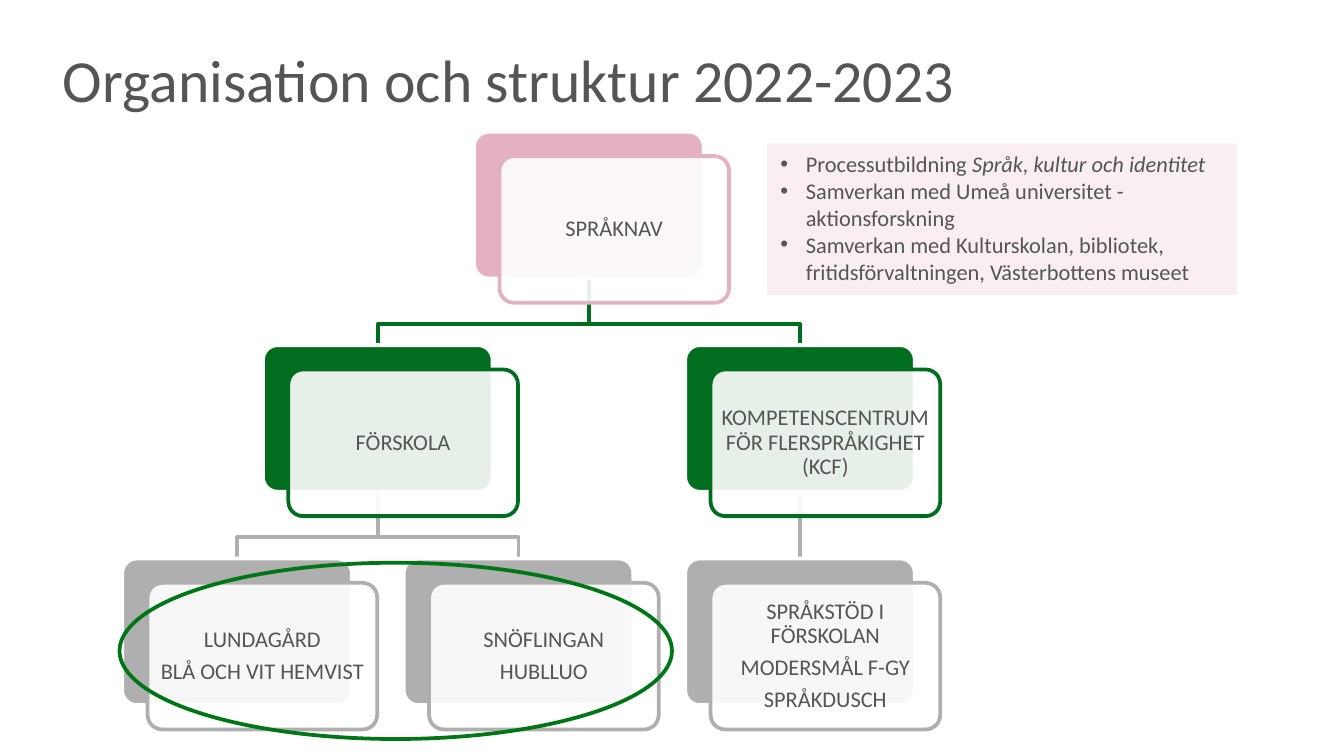
from dataclasses import dataclass
from typing import Optional

import pptx
import pptx.dml.color
import pptx.enum.shapes
import pptx.enum.text
import pptx.oxml.ns
import pptx.util
from lxml import etree
from pptx.dml.color import RGBColor
from pptx.enum.shapes import MSO_CONNECTOR, MSO_SHAPE
from pptx.enum.text import MSO_ANCHOR, MSO_AUTO_SIZE, PP_ALIGN
from pptx.oxml.ns import qn
from pptx.util import Cm, Pt

TEXT = RGBColor(0x55, 0x55, 0x55)
WHITE = RGBColor(0xFF, 0xFF, 0xFF)
PINK = RGBColor(0xE3, 0xB1, 0xC2)
PALE_PINK = RGBColor(0xF9, 0xEF, 0xF3)
GREEN = RGBColor(0x00, 0x6E, 0x1E)
RING_GREEN = RGBColor(0x00, 0x76, 0x16)
GREY = RGBColor(0xAF, 0xAF, 0xAF)
LEVEL_COLORS = [PINK, GREEN, GREY]

FONT = "Calibri"
LINE_WIDTH = Pt(2)
CARD_WIDTH, CARD_HEIGHT = 4.34, 2.77
FIRST_LEFT, COLUMN_STEP = 2.31, 5.32
FIRST_TOP, LEVEL_STEP = 2.49, 4.03
FRONT_SHIFT_X, FRONT_SHIFT_Y = 0.48, 0.46
BEND_DROP = 0.86


@dataclass(frozen=True)
class Unit:
    lines: tuple[str, ...]
    level: int
    column: float
    parent: Optional["Unit"] = None

    @property
    def left(self) -> float:
        return FIRST_LEFT + self.column * COLUMN_STEP

    @property
    def top(self) -> float:
        return FIRST_TOP + self.level * LEVEL_STEP

    @property
    def center(self) -> float:
        return self.left + CARD_WIDTH / 2

    @property
    def bottom(self) -> float:
        return self.top + CARD_HEIGHT

    @property
    def color(self) -> RGBColor:
        return LEVEL_COLORS[self.level]


ROOT = Unit(("SPRÅKNAV",), 0, 1.25)
PRESCHOOL = Unit(("FÖRSKOLA",), 1, 0.5, ROOT)
CENTRE = Unit(("KOMPETENSCENTRUM FÖR FLERSPRÅKIGHET (KCF)",), 1, 2, ROOT)
UNITS = [
    ROOT,
    PRESCHOOL,
    Unit(("LUNDAGÅRD", "BLÅ OCH VIT HEMVIST"), 2, 0, PRESCHOOL),
    Unit(("SNÖFLINGAN", "HUBLLUO"), 2, 1, PRESCHOOL),
    CENTRE,
    Unit(("SPRÅKSTÖD I FÖRSKOLAN", "MODERSMÅL F-GY", "SPRÅKDUSCH"), 2, 2, CENTRE),
]
NOTES = [
    ("Processutbildning ", "Språk, kultur och identitet"),
    ("Samverkan med Umeå universitet - aktionsforskning", ""),
    ("Samverkan med Kulturskolan, bibliotek, fritidsförvaltningen, Västerbottens museet", ""),
]


def set_font(paragraph, size: float) -> None:
    paragraph.font.name = FONT
    paragraph.font.size = Pt(size)
    paragraph.font.color.rgb = TEXT


def set_line(shape, color: RGBColor) -> None:
    shape.line.color.rgb = color
    shape.line.width = LINE_WIDTH


def add_title(page, words: str) -> None:
    title = page.shapes.title
    title.left, title.top, title.width, title.height = Cm(0.94), Cm(1.12), Cm(21.69), Cm(1.17)
    frame = title.text_frame
    frame.text = words
    frame.auto_size = MSO_AUTO_SIZE.NONE
    frame.vertical_anchor = MSO_ANCHOR.BOTTOM
    frame.margin_left, frame.margin_bottom = Cm(0.25), Cm(0.12)
    frame.paragraphs[0].alignment = PP_ALIGN.LEFT
    set_font(frame.paragraphs[0], 32)


def add_straight_link(page, unit: Unit):
    link = page.shapes.add_connector(
        MSO_CONNECTOR.STRAIGHT,
        Cm(unit.center), Cm(unit.parent.bottom), Cm(unit.center), Cm(unit.top),
    )
    set_line(link, unit.color)
    etree.SubElement(link.element.spPr, qn("a:effectLst"))
    return link


def add_bent_link(page, unit: Unit) -> None:
    parent = unit.parent
    bend = parent.bottom + BEND_DROP
    points = [(parent.center, bend), (unit.center, bend), (unit.center, unit.top)]
    builder = page.shapes.build_freeform(Cm(parent.center), Cm(parent.bottom))
    builder.add_line_segments([(Cm(x), Cm(y)) for x, y in points], close=False)
    link = builder.convert_to_shape()
    link.shadow.inherit = False
    link.fill.background()
    set_line(link, unit.color)


def add_panel(page, left: float, top: float, fill: RGBColor, line: RGBColor):
    panel = page.shapes.add_shape(
        MSO_SHAPE.ROUNDED_RECTANGLE, Cm(left), Cm(top), Cm(CARD_WIDTH), Cm(CARD_HEIGHT)
    )
    panel.adjustments[0] = 0.1
    panel.shadow.inherit = False
    panel.fill.solid()
    panel.fill.fore_color.rgb = fill
    set_line(panel, line)
    return panel


def add_card(page, unit: Unit):
    back = add_panel(page, unit.left, unit.top, unit.color, WHITE)
    front = add_panel(page, unit.left + FRONT_SHIFT_X, unit.top + FRONT_SHIFT_Y, WHITE, unit.color)
    tint = front.element.spPr.find(qn("a:solidFill")).find(qn("a:srgbClr"))
    etree.SubElement(tint, qn("a:alpha"), val="90000")
    frame = front.text_frame
    frame.word_wrap = True
    frame.vertical_anchor = MSO_ANCHOR.MIDDLE
    frame.margin_left = frame.margin_right = Cm(0.05)
    frame.margin_top = frame.margin_bottom = Cm(0.13)
    frame.text = "\n".join(unit.lines)
    for paragraph in frame.paragraphs:
        paragraph.alignment = PP_ALIGN.CENTER
        paragraph.line_spacing = 0.9
        paragraph.space_after = Pt(4.2)
        set_font(paragraph, 12)
    return back


def add_chart_tree(page) -> None:
    straight_links = []
    for unit in UNITS:
        if unit.parent is None:
            continue
        if unit.column == unit.parent.column:
            straight_links.append((add_straight_link(page, unit), unit))
        else:
            add_bent_link(page, unit)
    cards = {unit: add_card(page, unit) for unit in UNITS}
    for link, unit in straight_links:
        link.begin_connect(cards[unit.parent], 2)
        link.end_connect(cards[unit], 0)


def add_ring(page) -> None:
    ring = page.shapes.add_shape(MSO_SHAPE.OVAL, Cm(2.26), Cm(10.63), Cm(10.44), Cm(3.33))
    ring.shadow.inherit = False
    ring.fill.background()
    set_line(ring, RING_GREEN)


def add_notes_box(page) -> None:
    box = page.shapes.add_shape(MSO_SHAPE.RECTANGLE, Cm(14.5), Cm(2.71), Cm(8.88), Cm(2.86))
    box.shadow.inherit = False
    box.fill.solid()
    box.fill.fore_color.rgb = PALE_PINK
    box.line.fill.background()
    frame = box.text_frame
    frame.word_wrap = True
    frame.vertical_anchor = MSO_ANCHOR.TOP
    for index, (plain, emphasis) in enumerate(NOTES):
        para = frame.paragraphs[0] if index == 0 else frame.add_paragraph()
        para.alignment = PP_ALIGN.LEFT
        properties = para._p.get_or_add_pPr()
        properties.set("marL", str(Cm(0.48)))
        properties.set("indent", str(-Cm(0.48)))
        etree.SubElement(properties, qn("a:buFont"), typeface="Arial")
        etree.SubElement(properties, qn("a:buChar"), char="•")
        set_font(para, 12)
        para.add_run().text = plain
        if emphasis:
            span = para.add_run()
            span.text = emphasis
            span.font.italic = True


def main() -> None:
    deck = pptx.Presentation()
    deck.slide_width, deck.slide_height = Cm(25.4), Cm(14.28)
    page = deck.slides.add_slide(deck.slide_layouts[5])
    add_title(page, "Organisation och struktur 2022-2023")
    add_chart_tree(page)
    add_ring(page)
    add_notes_box(page)
    deck.save("out.pptx")


if __name__ == "__main__":
    main()
